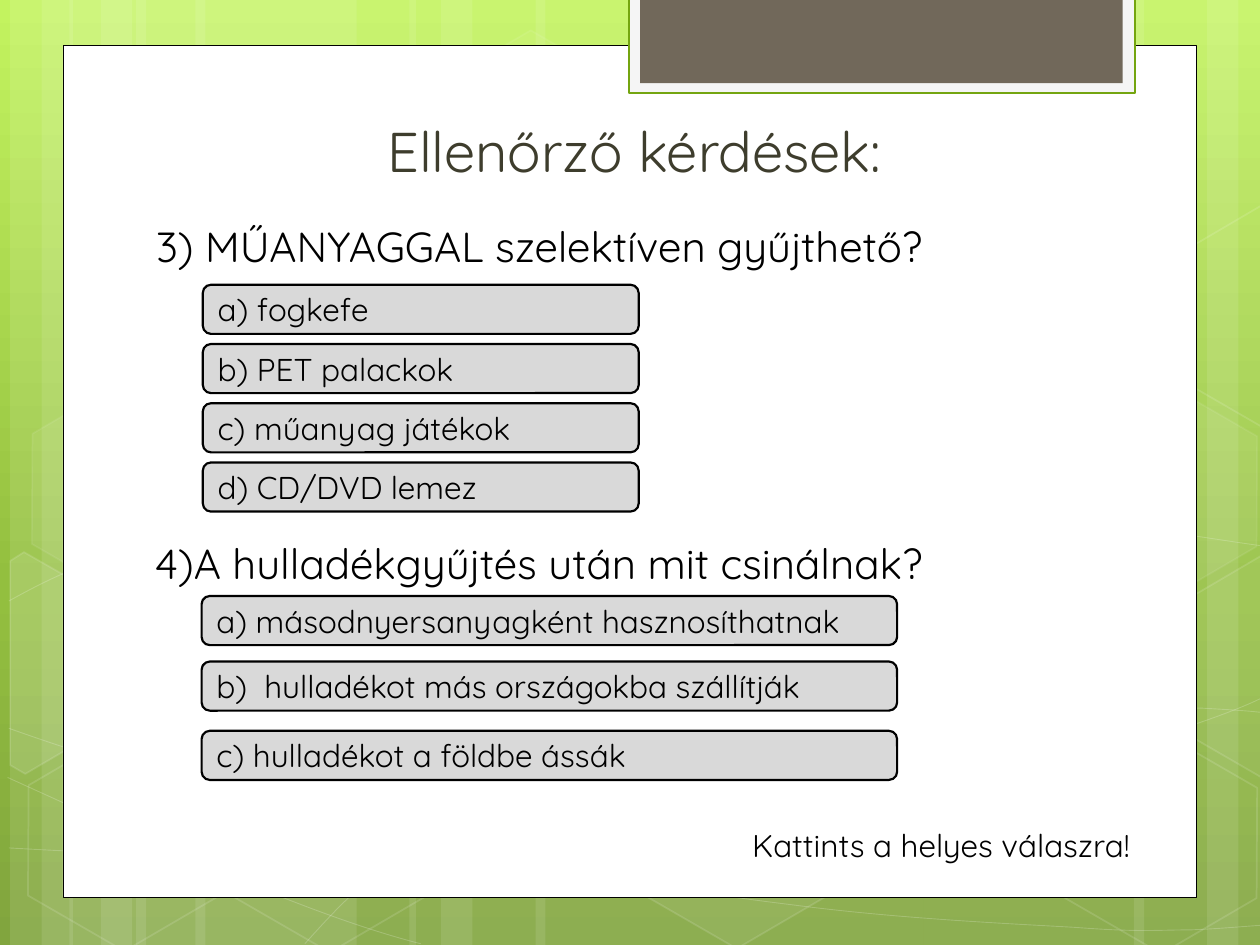
import copy
import math

import lxml.etree
import pptx
import pptx.dml.color
import pptx.enum.shapes
import pptx.enum.text
import pptx.oxml.ns
import pptx.util

Inches = pptx.util.Inches
qn = pptx.oxml.ns.qn
SHAPE = pptx.enum.shapes.MSO_SHAPE
ALIGN = pptx.enum.text.PP_ALIGN
ANCHOR = pptx.enum.text.MSO_ANCHOR
FONT = "Quicksand"
TILT = 30

STRIPES = [
    (1.08, 1.75), (0.08, 0.5), (0.33, 0.83), (1.55, 1.75), (0.55, 0.5), (0.8, 0.83),
    (7.33, 1.75), (9.58, 0.5), (9, 0.83), (4.25, 3.08), (3.25, 0.5), (3.5, 0.83),
]
CURVES = [
    [(0.07, 6.73), (0.61, 6.76), (1.15, 6.79), (1.9, 6.78), (2.65, 6.77), (3.58, 6.75),
     (4.58, 6.65), (5.58, 6.55), (7, 6.36), (7.92, 6.17), (8.83, 5.98), (9.77, 5.68),
     (10.07, 5.51)],
    [(0.07, 4.77), (0.36, 4.61), (0.65, 4.46), (1.21, 4.31), (1.78, 4.16), (2.59, 3.94),
     (3.47, 3.87), (4.36, 3.8), (5.44, 3.79), (6.54, 3.87), (7.64, 3.95), (9.47, 4.26),
     (10.07, 4.34)],
    [(0.06, 6.17), (1.27, 6.72), (2.47, 7.27), (3.34, 7.49)],
    [(0.07, 5.78), (0.38, 5.89), (0.7, 6), (1.28, 6.16), (1.86, 6.31), (2.73, 6.56),
     (3.57, 6.73), (4.4, 6.9), (5.45, 7.08), (6.28, 7.18), (7.11, 7.29), (8, 7.33),
     (8.53, 7.36), (9.05, 7.4), (9.19, 7.38), (9.45, 7.38), (9.71, 7.37), (9.89, 7.35),
     (10.07, 7.34)],
    [(2.42, 7.49), (2.6, 7.29), (2.78, 7.09), (3.02, 6.91), (3.26, 6.73), (3.6, 6.53),
     (3.88, 6.39), (4.16, 6.25), (4.33, 6.19), (4.7, 6.09), (5.06, 5.99), (5.73, 5.85),
     (6.08, 5.78), (6.44, 5.71), (6.49, 5.71), (6.8, 5.69), (7.11, 5.66), (7.6, 5.63),
     (7.94, 5.62), (8.29, 5.61), (8.86, 5.62), (8.86, 5.62), (9.08, 5.62), (9.31, 5.62),
     (9.53, 5.62), (9.71, 5.63), (9.88, 5.64), (9.97, 5.65), (10.06, 5.66), (10.03, 5.65),
     (10.06, 5.66)],
]
HEXAGONS = [
    (3.34, 0.36, 4, 8), (4.97, 5.89, 6, 12), (0.11, 5.91, None, 12),
    (0.14, 3.12, 7, 8), (1.74, 5.92, None, 12), (7.53, 4.53, 10, 12),
    (8.34, 5.93, None, 12), (8.34, 3.14, 7, 8),
]
CUT_HEXAGONS = [
    ((0.36, 5.35), 10,
     [(0.08, 4.45), (0.19, 4.38), (0.96, 4.82), (0.95, 5.7), (0.2, 6.14), (0.08, 6.07)]),
    ((9.85, 5.2), 4,
     [(9.26, 4.85), (10.01, 4.41), (10.09, 4.46), (10.09, 6.13), (10.02, 6.17), (9.26, 5.73)]),
    ((9.85, 2.41), None,
     [(9.26, 2.07), (10.01, 1.63), (10.1, 1.68), (10.09, 3.35), (10.02, 3.39), (9.26, 2.95)]),
]
FIRST_ANSWERS = ["a) fogkefe", "b) PET palackok", "c) műanyag játékok", "d) CD/DVD lemez"]
SECOND_ANSWERS = [
    (4.73, "a) másodnyersanyagként hasznosíthatnak"),
    (5.25, "b)  hulladékot más országokba szállítják"),
    (5.8, "c) hulladékot a földbe ássák"),
]


def rgb(value):
    return pptx.dml.color.RGBColor.from_string(value)


def paint(fill, color, alpha=None):
    if color is None:
        fill.background()
        return
    fill.solid()
    fill.fore_color.rgb = rgb(color)
    if alpha is not None:
        clr = fill._xPr.find(qn("a:solidFill"))[0]
        lxml.etree.SubElement(clr, qn("a:alpha"), val=str(alpha * 1000))


def style(sp, fill=None, alpha=None, line=None, width=1, line_alpha=None):
    sp.shadow.inherit = False
    paint(sp.fill, fill, alpha)
    paint(sp.line.fill, line, line_alpha)
    if line:
        sp.line.width = pptx.util.Pt(width)


def add_box(s, kind, box, **look):
    sp = s.shapes.add_shape(kind, *map(Inches, box))
    style(sp, **look)
    return sp


def add_outline(s, points, close, **look):
    pts = [(Inches(x), Inches(y)) for x, y in points]
    builder = s.shapes.build_freeform(*pts[0])
    builder.add_line_segments(pts[1:], close=close)
    sp = builder.convert_to_shape()
    style(sp, **look)
    return sp


def add_curve(s, knots, **look):
    sp = add_outline(s, knots, False, **look)
    segments = sp._element.xpath(".//a:path/a:lnTo")
    for i in range(0, len(segments), 3):
        curve = lxml.etree.Element(qn("a:cubicBezTo"))
        segments[i].addprevious(curve)
        for segment in segments[i:i + 3]:
            curve.append(segment[0])
            segment.getparent().remove(segment)


def untilt(point, center):
    angle = math.radians(-TILT)
    dx, dy = point[0] - center[0], point[1] - center[1]
    return (center[0] + dx * math.cos(angle) - dy * math.sin(angle),
            center[1] + dx * math.sin(angle) + dy * math.cos(angle))


def write(sp, text, size, color="000000", align=ALIGN.LEFT, **frame):
    tf = sp.text_frame
    for name, value in ({"word_wrap": True} | frame).items():
        setattr(tf, name, value)
    p = tf.paragraphs[0]
    p.alignment = align
    r = p.add_run()
    r.text = text
    font = {"name": FONT, "size": pptx.util.Pt(size)}
    for name, value in font.items():
        setattr(r.font, name, value)
    r.font.color.rgb = rgb(color)


def add_text(s, box, text, size, **options):
    write(s.shapes.add_textbox(*map(Inches, box)), text, size, **options)


def add_answer(s, left, top, width, text):
    sp = add_box(s, SHAPE.ROUNDED_RECTANGLE, (left, top, width, 0.39),
                 fill="D9D9D9", line="000000", width=1.25)
    write(sp, text, 18, vertical_anchor=ANCHOR.MIDDLE)


def set_background(s):
    fill = s.background.fill
    fill.gradient()
    fill.gradient_angle = 270
    stops = s._element.xpath(".//a:gsLst")[0]
    stops.append(copy.deepcopy(stops[0]))
    colors = [(0, "C3F35F"), (0.62, "93BF3F"), (1, "81A53E")]
    for stop, (position, color) in zip(fill.gradient_stops, colors):
        stop.position = position
        stop.color.rgb = rgb(color)


def draw_backdrop(s):
    for left, width in STRIPES:
        add_box(s, SHAPE.RECTANGLE, (left, 0, width, 7.5), fill="FFFFFF", alpha=10)
    for knots in CURVES:
        add_curve(s, knots, line="FFFFFF", width=0.5, line_alpha=20)
    for left, top, alpha, line_alpha in HEXAGONS:
        sp = add_box(s, SHAPE.HEXAGON, (left, top, 1.75, 1.52), fill="FFFFFF" if alpha else None,
                     alpha=alpha, line="FFFFFF", line_alpha=line_alpha)
        sp.rotation = TILT
        sp.adjustments[0] = 0.285
        sp.adjustments[1] = 1.155
    for center, alpha, points in CUT_HEXAGONS:
        sp = add_outline(s, [untilt(point, center) for point in points], True,
                         fill="FFFFFF" if alpha else None, alpha=alpha,
                         line="FFFFFF", line_alpha=12)
        sp.rotation = TILT


def draw_panel(s):
    add_box(s, SHAPE.RECTANGLE, (0.5, 0.36, 9, 6.76), fill="FFFFFF", line="000000", width=0.5)
    add_box(s, SHAPE.RECTANGLE, (4.99, -0.02, 4.02, 0.76), fill="F5F5F5", line="74A510", width=1.25)
    add_box(s, SHAPE.RECTANGLE, (5.08, -0.02, 3.83, 0.68), fill="71685A")


def main():
    prs = pptx.Presentation()
    prs.slide_width = Inches(10)
    prs.slide_height = Inches(7.5)
    s = prs.slides.add_slide(prs.slide_layouts[6])
    set_background(s)
    draw_backdrop(s)
    draw_panel(s)
    add_text(s, (0.51, 0.68, 8.98, 1.02), "Ellenőrző kérdések:", 32, color="3E3D2D",
             align=ALIGN.CENTER, vertical_anchor=ANCHOR.MIDDLE, margin_left=Inches(0.17))
    add_text(s, (1.14, 1.7, 7.72, 0.5), "3) MŰANYAGGAL szelektíven gyűjthető?", 24)
    add_text(s, (5.87, 6.51, 3.29, 0.4), "Kattints a helyes válaszra!", 18, word_wrap=False)
    for i, text in enumerate(FIRST_ANSWERS):
        add_answer(s, 1.61, 2.26 + 0.47 * i, 3.46, text)
    add_text(s, (1.13, 4.22, 7.72, 0.5), "4)A hulladékgyűjtés után mit csinálnak?", 24)
    for top, text in SECOND_ANSWERS:
        add_answer(s, 1.6, top, 5.52, text)
    prs.save("out.pptx")


if __name__ == "__main__":
    main()
